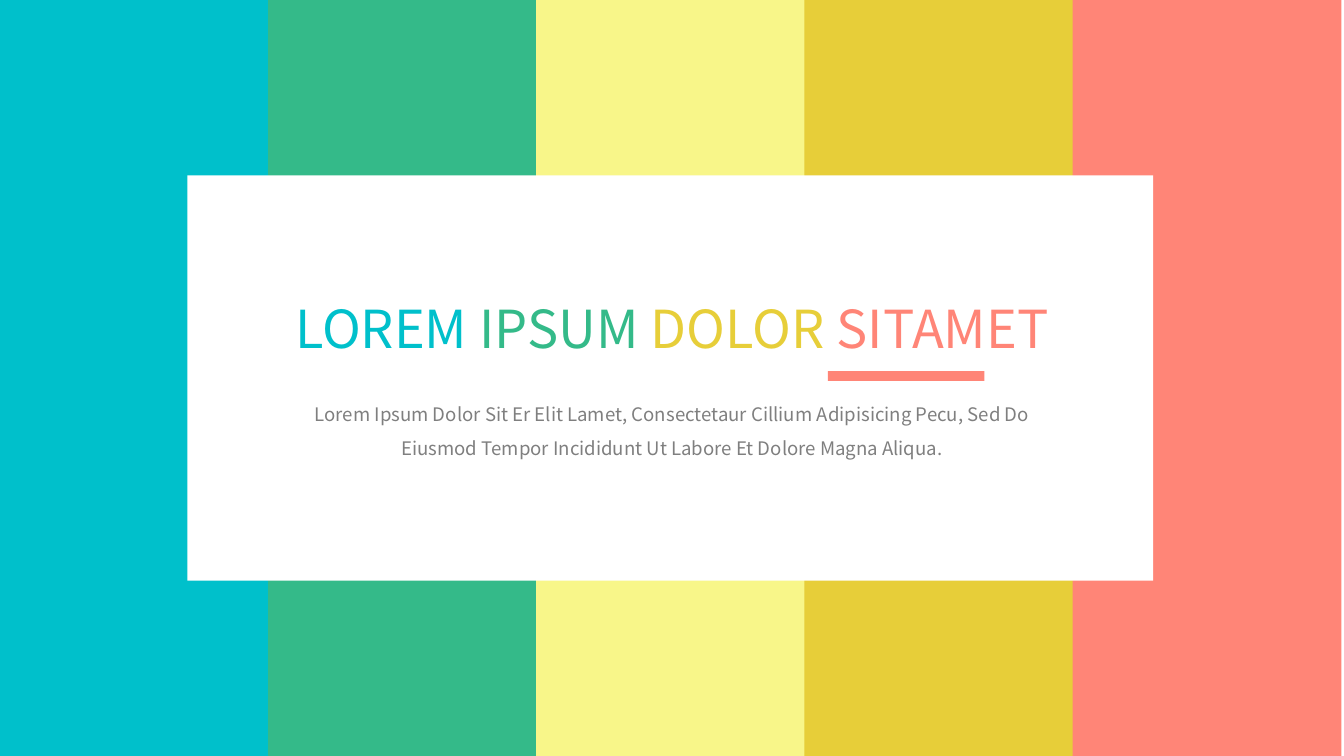
"""Build a title slide with a white card over five colour stripes."""
import dataclasses
import typing

import pptx
import pptx.dml.color
import pptx.enum.shapes
import pptx.enum.text
import pptx.util

COLORS = {
    "cyan": "00C0CB",
    "green": "34BA89",
    "lemon": "F8F689",
    "gold": "E7CE39",
    "coral": "FF8577",
    "white": "FFFFFF",
    "gray": "7F7F7F",
}
FONT = "Noto Sans CJK SC"
WIDTH, HEIGHT = pptx.util.Inches(13.333), pptx.util.Inches(7.5)
STRIPE_STEP, STRIPE_WIDTH = 19.95, 20


@dataclasses.dataclass(frozen=True)
class Box:
    """Area in percent of the slide's width and height."""
    left: float
    top: float
    width: float
    height: float

    def emu(self) -> tuple[int, int, int, int]:
        return (round(WIDTH * self.left / 100), round(HEIGHT * self.top / 100),
                round(WIDTH * self.width / 100), round(HEIGHT * self.height / 100))


class Block(typing.NamedTuple):
    box: Box
    color: str


class Run(typing.NamedTuple):
    text: str
    color: str


STRIPES = [Block(Box(i * STRIPE_STEP, 0, STRIPE_WIDTH, 100), color)
           for i, color in enumerate(["cyan", "green", "lemon", "gold", "coral"])]
CARD = Block(Box(13.95, 23.2, 71.85, 53.6), "white")
UNDERLINE = Block(Box(61.6, 49.1, 11.65, 1.3), "coral")
TITLE_BOX = Box(17.8, 38.5, 64.4, 9.75)
TITLE = [Run("LOREM ", "cyan"), Run("IPSUM ", "green"),
         Run("DOLOR ", "gold"), Run("SITAMET", "coral")]
BODY_BOX = Box(22.2, 51.2, 55.65, 9.9)
BODY = [Run("Lorem Ipsum Dolor Sit Er Elit Lamet, Consectetaur Cillium "
            "Adipisicing Pecu, Sed Do Eiusmod Tempor Incididunt Ut Labore "
            "Et Dolore Magna Aliqua.", "gray")]


def rgb(color: str) -> pptx.dml.color.RGBColor:
    return pptx.dml.color.RGBColor.from_string(COLORS[color])


def draw_block(s, block: Block) -> None:
    sp = s.shapes.add_shape(pptx.enum.shapes.MSO_SHAPE.RECTANGLE, *block.box.emu())
    sp.shadow.inherit = False
    sp.fill.solid()
    sp.fill.fore_color.rgb = rgb(block.color)
    sp.line.fill.background()


def write_text(sp, box: Box, runs: list[Run], size: float, spacing: float,
               anchor: pptx.enum.text.MSO_ANCHOR) -> None:
    sp.left, sp.top, sp.width, sp.height = box.emu()
    tf = sp.text_frame
    tf.word_wrap = True
    tf.auto_size = pptx.enum.text.MSO_AUTO_SIZE.NONE
    tf.vertical_anchor = anchor
    p = tf.paragraphs[0]
    p.alignment = pptx.enum.text.PP_ALIGN.CENTER
    p.line_spacing = spacing
    for run in runs:
        r = p.add_run()
        r.text = run.text
        r.font.name = FONT
        r.font.size = pptx.util.Pt(size)
        r.font.color.rgb = rgb(run.color)


def main() -> None:
    prs = pptx.Presentation()
    prs.slide_width, prs.slide_height = WIDTH, HEIGHT
    s = prs.slides.add_slide(prs.slide_layouts.get_by_name("Title Only"))
    for block in [*STRIPES, CARD, UNDERLINE]:
        draw_block(s, block)
    title = s.shapes.title
    title.element.getparent().append(title.element)
    write_text(title, TITLE_BOX, TITLE, 37.4, 1.0, pptx.enum.text.MSO_ANCHOR.MIDDLE)
    body = s.shapes.add_textbox(*BODY_BOX.emu())
    write_text(body, BODY_BOX, BODY, 13.3, 1.5, pptx.enum.text.MSO_ANCHOR.TOP)
    prs.save("out.pptx")


if __name__ == "__main__":
    main()
